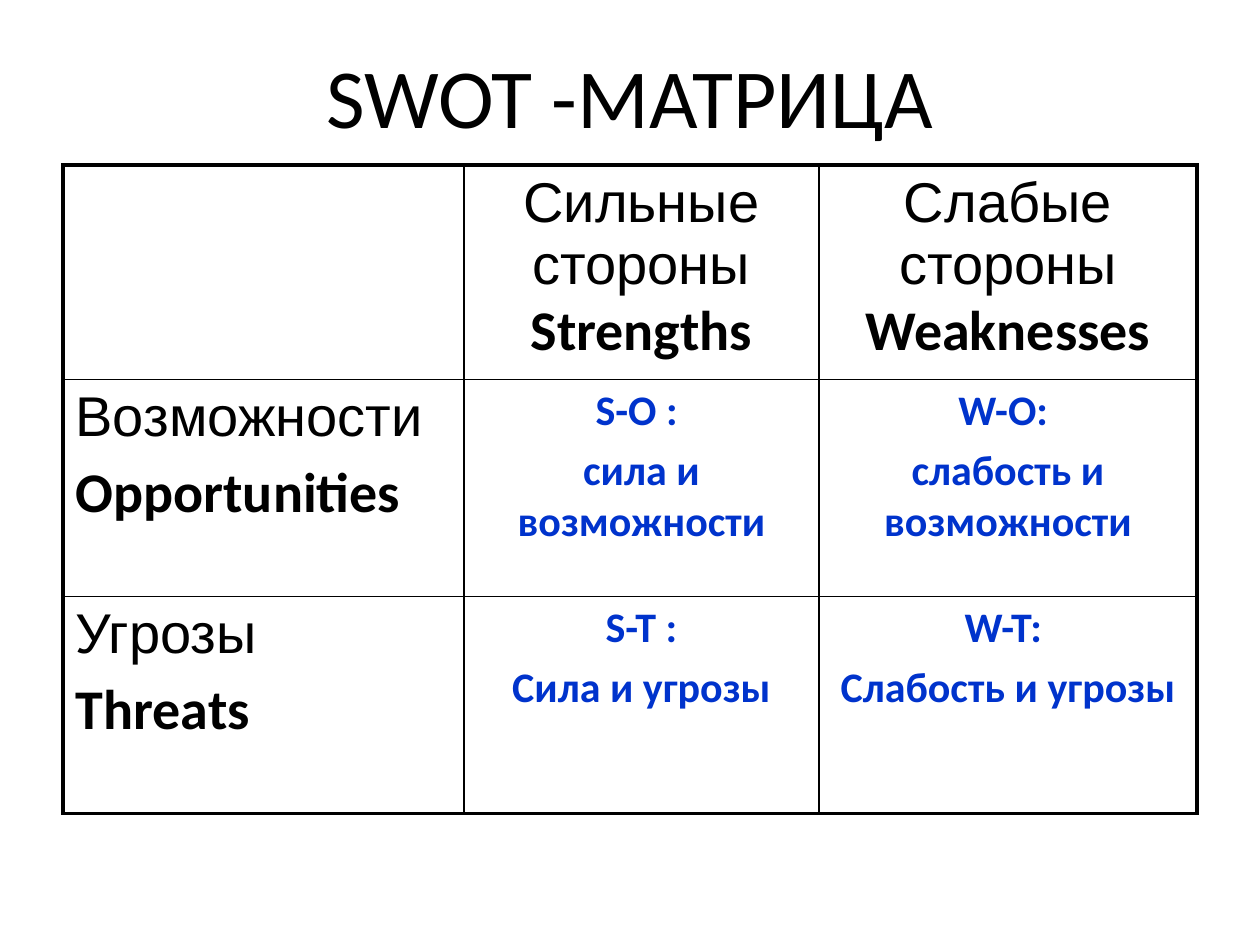
from dataclasses import dataclass

from lxml.etree import SubElement
from pptx import Presentation
from pptx.dml.color import RGBColor
from pptx.enum.text import MSO_ANCHOR, PP_ALIGN
from pptx.oxml.ns import qn
from pptx.util import Emu, Pt


@dataclass(frozen=True)
class Theme:
    ink: str = "000000"
    blue: str = "0033CC"
    sans: str = "Calibri"
    arial: str = "Arial"
    title: int = 48
    head: int = 32
    body: int = 24
    thick: float = 2.25
    thin: float = 1


T = Theme()


def px(n):
    return Emu(round(n * 914400 / 126))


def write(para, text, size, font=T.sans, color=T.ink, bold=False,
          align=PP_ALIGN.LEFT, gap=0):
    para.alignment = align
    para.space_before = Pt(gap)
    run = para.add_run()
    run.text = text
    run.font.size = Pt(size)
    run.font.name = font
    run.font.bold = bold
    run.font.color.rgb = RGBColor.from_string(color)


def border(cell, sides):
    props = cell._tc.get_or_add_tcPr()
    for side, width in sides.items():
        line = SubElement(props, qn(f"a:ln{side}"), w=str(Pt(width)))
        fill = SubElement(line, qn("a:solidFill"))
        SubElement(fill, qn("a:srgbClr"), val=T.ink)


def title(slide, box, text):
    frame = slide.shapes.add_textbox(*map(px, box)).text_frame
    frame.word_wrap = True
    frame.vertical_anchor = MSO_ANCHOR.MIDDLE
    write(frame.paragraphs[0], text, T.title, align=PP_ALIGN.CENTER)


def column(cell, local, english):
    para = cell.text_frame.paragraphs[0]
    write(para, local + " ", T.head, font=T.arial, align=PP_ALIGN.CENTER)
    write(para, english, T.head, bold=True, align=PP_ALIGN.CENTER)


def row(cell, local, english):
    frame = cell.text_frame
    write(frame.paragraphs[0], local, T.head, font=T.arial)
    write(frame.add_paragraph(), english, T.head, bold=True, gap=T.head * 0.2)


def pair(cell, code, text):
    frame = cell.text_frame
    look = dict(size=T.body, color=T.blue, bold=True, align=PP_ALIGN.CENTER)
    write(frame.paragraphs[0], code, **look)
    write(frame.add_paragraph(), text, gap=T.body * 0.2, **look)


def matrix(slide, box, widths, heights, heads, sides, pairs):
    rows, cols = len(heights), len(widths)
    grid = slide.shapes.add_table(rows, cols, *map(px, box)).table
    grid.first_row = grid.horz_banding = False
    for col, width in zip(grid.columns, widths):
        col.width = px(width)
    for line, height in zip(grid.rows, heights):
        line.height = px(height)
    for r in range(rows):
        for c in range(cols):
            cell = grid.cell(r, c)
            edges = {"L": c == 0, "R": c == cols - 1,
                     "T": r == 0, "B": r == rows - 1}
            border(cell, {k: T.thick if v else T.thin
                          for k, v in edges.items()})
            cell.fill.background()
            if r and c:
                pair(cell, *pairs[r - 1][c - 1])
            elif c:
                column(cell, *heads[c - 1])
            elif r:
                row(cell, *sides[r - 1])


def main():
    deck = Presentation()
    deck.slide_width, deck.slide_height = px(1260), px(945)
    slide = deck.slides.add_slide(deck.slide_layouts[6])
    title(slide, (63, 16, 1134, 158), "SWOT -МАТРИЦА")
    matrix(
        slide, (63, 165, 1134, 626), (401, 355, 378), (192, 217, 217),
        heads=[("Сильные стороны", "Strengths"),
               ("Слабые стороны", "Weaknesses")],
        sides=[("Возможности", "Opportunities"), ("Угрозы", "Threats")],
        pairs=[[("S-O : ", "сила и возможности"),
                ("W-O: ", "слабость и возможности")],
               [("S-T :", "Сила и угрозы"),
                ("W-T: ", "Слабость и угрозы")]],
    )
    deck.save("out.pptx")


if __name__ == "__main__":
    main()
